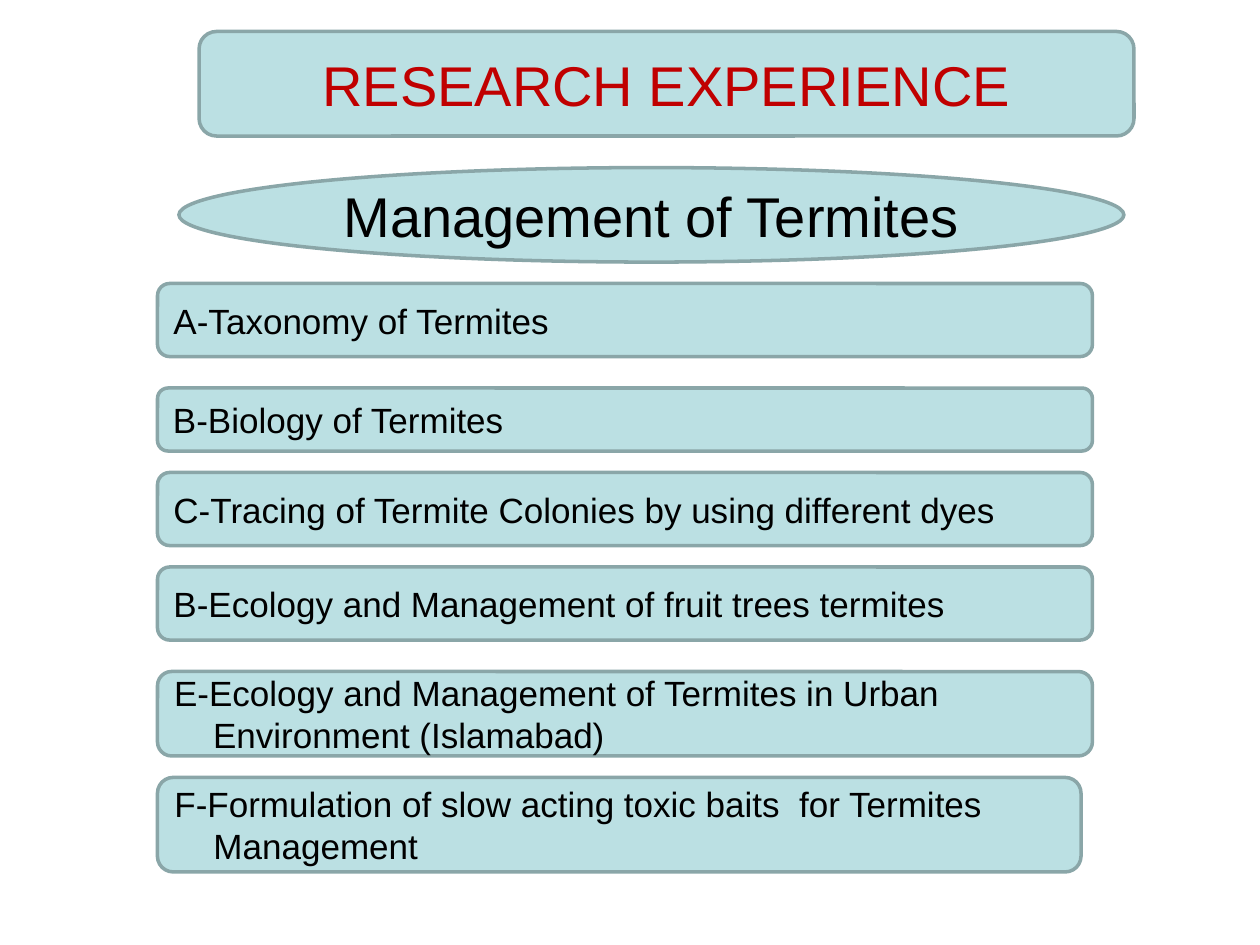
from pptx import Presentation
from pptx.dml.color import RGBColor
from pptx.enum import shapes, text
from pptx.util import Inches, Pt

PALE_TEAL = RGBColor(0xBB, 0xE0, 0xE3)
GREY_TEAL = RGBColor(0x8A, 0xA6, 0xA8)
RED = RGBColor(0xC0, 0x00, 0x00)
BLACK = RGBColor(0x00, 0x00, 0x00)

ROUNDED = shapes.MSO_SHAPE.ROUNDED_RECTANGLE
OVAL = shapes.MSO_SHAPE.OVAL
LEFT, CENTER = text.PP_ALIGN.LEFT, text.PP_ALIGN.CENTER

TOPIC_LEFT = 1.25
CONTINUATION_INDENT = Inches(0.31)

# top, width, height, lines
TOPICS = [
    (2.25, 7.42, 0.58, ["A-Taxonomy of Termites"]),
    (3.08, 7.42, 0.5, ["B-Biology of Termites"]),
    (3.75, 7.42, 0.58, ["C-Tracing of Termite Colonies by using different dyes"]),
    (4.5, 7.42, 0.58, ["B-Ecology and Management of fruit trees termites"]),
    (5.33, 7.42, 0.67, ["E-Ecology and Management of Termites in Urban",
                        "Environment (Islamabad)"]),
    (6.17, 7.33, 0.75, ["F-Formulation of slow acting toxic baits  for Termites",
                        "Management"]),
]


def add_panel(slide, outline, box, lines, size, color=BLACK, align=LEFT):
    """Add a filled shape with one paragraph per line, indented after the first."""
    panel = slide.shapes.add_shape(outline, *map(Inches, box))
    panel.shadow.inherit = False
    panel.fill.solid()
    panel.fill.fore_color.rgb = PALE_TEAL
    panel.line.color.rgb = GREY_TEAL
    panel.line.width = Pt(2)

    frame = panel.text_frame
    frame.word_wrap = True
    frame.vertical_anchor = text.MSO_ANCHOR.MIDDLE
    frame.text = "\n".join(lines)
    for number, paragraph in enumerate(frame.paragraphs):
        paragraph.alignment = align
        paragraph.font.name = "Arial"
        paragraph.font.size = Pt(size)
        paragraph.font.color.rgb = color
        if number:
            paragraph._p.get_or_add_pPr().set("marL", str(CONTINUATION_INDENT))


def add_headings(slide):
    add_panel(slide, ROUNDED, (1.58, 0.25, 7.42, 0.83),
              ["RESEARCH EXPERIENCE"], 32, RED, CENTER)
    add_panel(slide, OVAL, (1.42, 1.33, 7.5, 0.75),
              ["Management of Termites"], 32, BLACK, CENTER)


def add_topics(slide):
    for top, width, height, lines in TOPICS:
        add_panel(slide, ROUNDED, (TOPIC_LEFT, top, width, height), lines, 20)


def main():
    deck = Presentation()
    deck.slide_width, deck.slide_height = Inches(10), Inches(7.5)
    slide = deck.slides.add_slide(deck.slide_layouts[6])
    add_headings(slide)
    add_topics(slide)
    deck.save("out.pptx")


if __name__ == "__main__":
    main()
